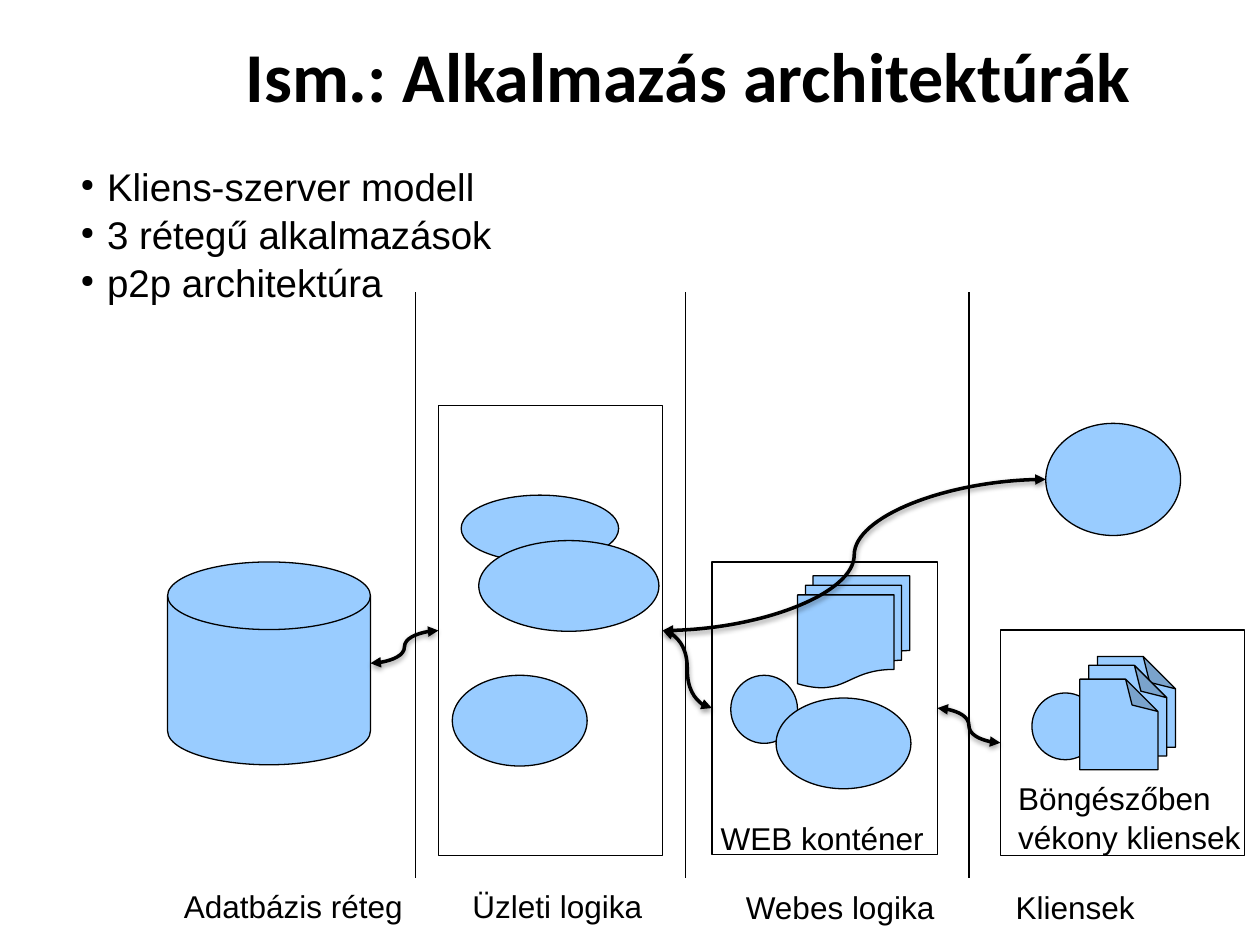
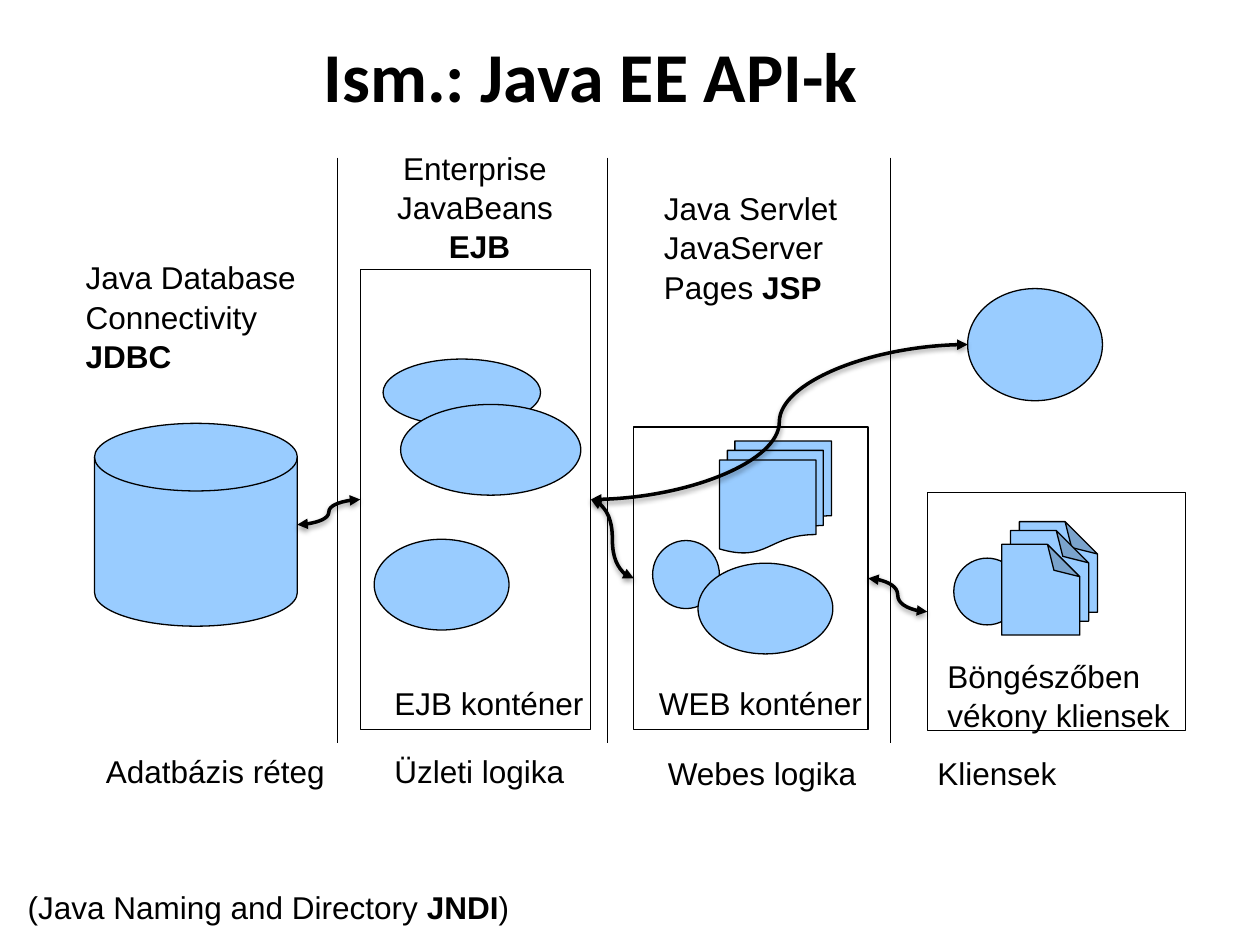
from dataclasses import dataclass

from lxml import etree
from pptx import Presentation, util as u
from pptx.dml.color import RGBColor
from pptx.enum import shapes, text
from pptx.oxml.ns import qn

BLACK = RGBColor(0x00, 0x00, 0x00)
WHITE = RGBColor(0xFF, 0xFF, 0xFF)
SKY = RGBColor(0x99, 0xCC, 0xFF)
TITLE_FONT, BODY_FONT = "Calibri", "Arial"
TITLE_SIZE, LIST_SIZE, LABEL_SIZE = 40, 22, 18
COLUMNS, ROWS = 10, 7.5
SLIDE_WIDTH, SLIDE_HEIGHT = u.Inches(10), u.Inches(7.5)
CAPTION_WIDTH, CAPTION_HEIGHT = 2, 0.34
DIVIDERS = (0, 2.14, 4.39)
DIVIDER_HEIGHT = 4.65
Kind = shapes.MSO_SHAPE


@dataclass
class Box:
    """A rectangle in columns and rows of the slide grid."""
    left: float
    top: float
    width: float
    height: float

    def inner(self, left, top, width, height):
        return Box(self.left + left, self.top + top, width, height)

    def side(self, share):
        """Middle of the left (0) or right (1) edge."""
        return self.left + share * self.width, self.top + self.height / 2

    def lengths(self):
        return (across(self.left), down(self.top),
                across(self.width), down(self.height))


def across(columns):
    return round(SLIDE_WIDTH * columns / COLUMNS)


def down(rows):
    return round(SLIDE_HEIGHT * rows / ROWS)


def add_child(parent, tag, **attributes):
    child = etree.SubElement(parent, qn(tag))
    for name, value in attributes.items():
        child.set(name, str(value))
    return child


def add_text(page, box, lines, size=LABEL_SIZE, font=BODY_FONT, bold=False,
             align=text.PP_ALIGN.LEFT, bullets=False, spacing=1.04):
    """Each line is a string, or a tuple whose odd parts are bold."""
    frame = page.shapes.add_textbox(*box.lengths()).text_frame
    frame.word_wrap = True
    frame.margin_left = frame.margin_right = u.Inches(0.09)
    frame.margin_top, frame.margin_bottom = u.Inches(0.06), u.Inches(0.04)
    for index, line in enumerate(lines):
        para = frame.add_paragraph() if index else frame.paragraphs[0]
        para.alignment = align
        para.line_spacing = spacing
        if bullets:
            add_bullet(para)
        parts = (line,) if isinstance(line, str) else line
        for number, part in enumerate(parts):
            if not part:
                continue
            span = para.add_run()
            span.text = part
            span.font.name = font
            span.font.size = u.Pt(size)
            span.font.bold = bold or number % 2 == 1
            span.font.color.rgb = BLACK
    return frame


def add_bullet(para):
    settings = para._p.get_or_add_pPr()
    settings.set("marL", str(u.Inches(0.43)))
    settings.set("indent", str(u.Inches(-0.21)))
    add_child(settings, "a:buSzPct", val=45000)
    add_child(settings, "a:buChar", char="●")


def add_title(page, left, title):
    frame = add_text(page, Box(left, 0.18, 7.5, 0.71), [title], TITLE_SIZE,
                     TITLE_FONT, bold=True, spacing=1)
    frame.margin_top = u.Inches(0.08)


def add_figure(page, kind, box, fill=SKY):
    figure = page.shapes.add_shape(kind, *box.lengths())
    figure.shadow.inherit = False
    figure.fill.solid()
    figure.fill.fore_color.rgb = fill
    figure.line.color.rgb = BLACK
    figure.line.width = u.Pt(0.75)
    return figure


def add_frame(page, box):
    add_figure(page, Kind.RECTANGLE, box, WHITE)


def add_sheet(page, box):
    """Upright page with a folded top right corner."""
    sheet = add_figure(page, Kind.FOLDED_CORNER, box)
    sheet.rotation = 270
    geometry = sheet._element.spPr.find(qn("a:prstGeom"))
    add_child(geometry.find(qn("a:avLst")), "a:gd",
              name="adj", fmla="val 41400")


def add_ellipses(page, area, places):
    for place in places:
        add_figure(page, Kind.OVAL, area.inner(*place))


def add_line(page, kind, start, end, width):
    """Returns the connector and its empty effect list."""
    line = page.shapes.add_connector(
        kind, across(start[0]), down(start[1]), across(end[0]), down(end[1]))
    line.line.color.rgb = BLACK
    line.line.width = u.Pt(width)
    return line, add_child(line._element.spPr, "a:effectLst")


def add_link(page, start, end):
    """Shadowed curve with an arrowhead at both ends."""
    link, effects = add_line(page, shapes.MSO_CONNECTOR.CURVE, start, end, 2)
    outline = link._element.spPr.find(qn("a:ln"))
    for tag in ("a:headEnd", "a:tailEnd"):
        add_child(outline, tag, type="triangle")
    shadow = add_child(effects, "a:outerShdw", blurRad=u.Pt(3.1),
                       dist=u.Pt(1.6), dir=90 * 60000, rotWithShape=0)
    colour = add_child(shadow, "a:srgbClr", val=BLACK)
    add_child(colour, "a:alpha", val=38000)


def draw_dividers(page, area):
    for offset in DIVIDERS:
        left = area.left + offset
        add_line(page, shapes.MSO_CONNECTOR.STRAIGHT, (left, area.top),
                 (left, area.top + area.height), 0.75)


def draw_tier_names(page, area):
    names = (("Adatbázis réteg", -1.93, 0), ("Üzleti logika", 0.36, 0),
             ("Webes logika", 2.53, 0.01), ("Kliensek", 4.67, 0.01))
    for name, left, drop in names:
        place = area.inner(left, area.height + drop,
                           CAPTION_WIDTH, CAPTION_HEIGHT)
        add_text(page, place, [name])


def draw_business_tier(page, frame):
    add_frame(page, frame)
    add_ellipses(page, frame, ((0.18, 0.71, 1.25, 0.53),
                               (0.32, 1.07, 1.43, 0.72),
                               (0.11, 2.14, 1.07, 0.72)))


def draw_web_tier(page, frame):
    add_frame(page, frame)
    add_ellipses(page, frame, ((0.15, 0.9, 0.53, 0.54),
                               (0.51, 1.08, 1.07, 0.72)))
    add_figure(page, Kind.FLOWCHART_MULTIDOCUMENT,
               frame.inner(0.68, 0.11, 0.89, 0.89))


def draw_client_tier(page, area, frame):
    """Returns the box of the rich client above the frame."""
    rich_client = area.inner(5, 1.04, 1.07, 0.89)
    add_frame(page, frame)
    add_figure(page, Kind.OVAL, rich_client)
    add_figure(page, Kind.OVAL, area.inner(4.89, 3.18, 0.53, 0.53))
    for left, top in ((5.36, 2.94), (5.29, 3.01), (5.22, 3.12)):
        add_sheet(page, area.inner(left, top, 0.72, 0.62))
    return rich_client


def draw_architecture(page, area, database, business, web, clients, captions):
    """Four tiers side by side, joined by double arrows."""
    add_figure(page, Kind.FLOWCHART_MAGNETIC_DISK, database)
    draw_business_tier(page, business)
    draw_dividers(page, area)
    draw_web_tier(page, web)
    rich_client = draw_client_tier(page, area, clients)
    draw_tier_names(page, area)
    for left, top, *lines in captions:
        add_text(page, Box(left, top, CAPTION_WIDTH, CAPTION_HEIGHT), lines)
    for start, end in ((business, rich_client), (web, clients),
                       (database, business), (business, web)):
        add_link(page, start.side(1), end.side(0))


def build_architectures(page):
    add_title(page, 1.86, "Ism.: Alkalmazás architektúrák")
    add_text(page, Box(0.33, 1.22, 5.39, 1.1),
             ["Kliens-szerver modell", "3 rétegű alkalmazások",
              "p2p architektúra"], LIST_SIZE, bullets=True)
    draw_architecture(
        page, Box(3.3, 2.32, 6.58, DIVIDER_HEIGHT),
        database=Box(1.33, 4.46, 1.61, 1.61),
        business=Box(3.48, 3.22, 1.78, 3.57),
        web=Box(5.65, 4.46, 1.79, 2.32),
        clients=Box(7.94, 5, 1.94, 1.79),
        captions=((5.63, 6.43, "WEB konténer"),
                  (7.99, 6.11, "Böngészőben", "vékony kliensek")))


def build_apis(page):
    add_title(page, 2.48, "Ism.: Java EE API-k")
    draw_architecture(
        page, Box(2.68, 1.25, 6.73, DIVIDER_HEIGHT),
        database=Box(0.75, 3.36, 1.61, 1.61),
        business=Box(2.86, 2.14, 1.83, 3.65),
        web=Box(5.03, 3.39, 1.86, 2.4),
        clients=Box(7.36, 3.91, 2.05, 1.89),
        captions=((3.04, 5.36, "EJB konténer"),
                  (5.14, 5.36, "WEB konténer"),
                  (7.43, 5.14, "Böngészőben", "vékony kliensek")))
    add_text(page, Box(2.61, 1.11, 2.39, 0.86),
             ["Enterprise ", "JavaBeans ", ("", "EJB")],
             align=text.PP_ALIGN.CENTER)
    add_text(page, Box(5.18, 1.43, 1.63, 0.86),
             ["Java Servlet", ("JavaServer Pages ", "JSP")])
    add_text(page, Box(0.59, 1.98, 2, 0.6),
             ["Java Database", ("Connectivity ", "JDBC")])
    add_text(page, Box(0.13, 6.98, 4.15, 0.35),
             [("(Java Naming and Directory ", "JNDI", ")")])


def main():
    deck = Presentation()
    deck.slide_width, deck.slide_height = SLIDE_WIDTH, SLIDE_HEIGHT
    for build in (build_architectures, build_apis):
        build(deck.slides.add_slide(deck.slide_layouts[6]))
    deck.save("out.pptx")


if __name__ == "__main__":
    main()
